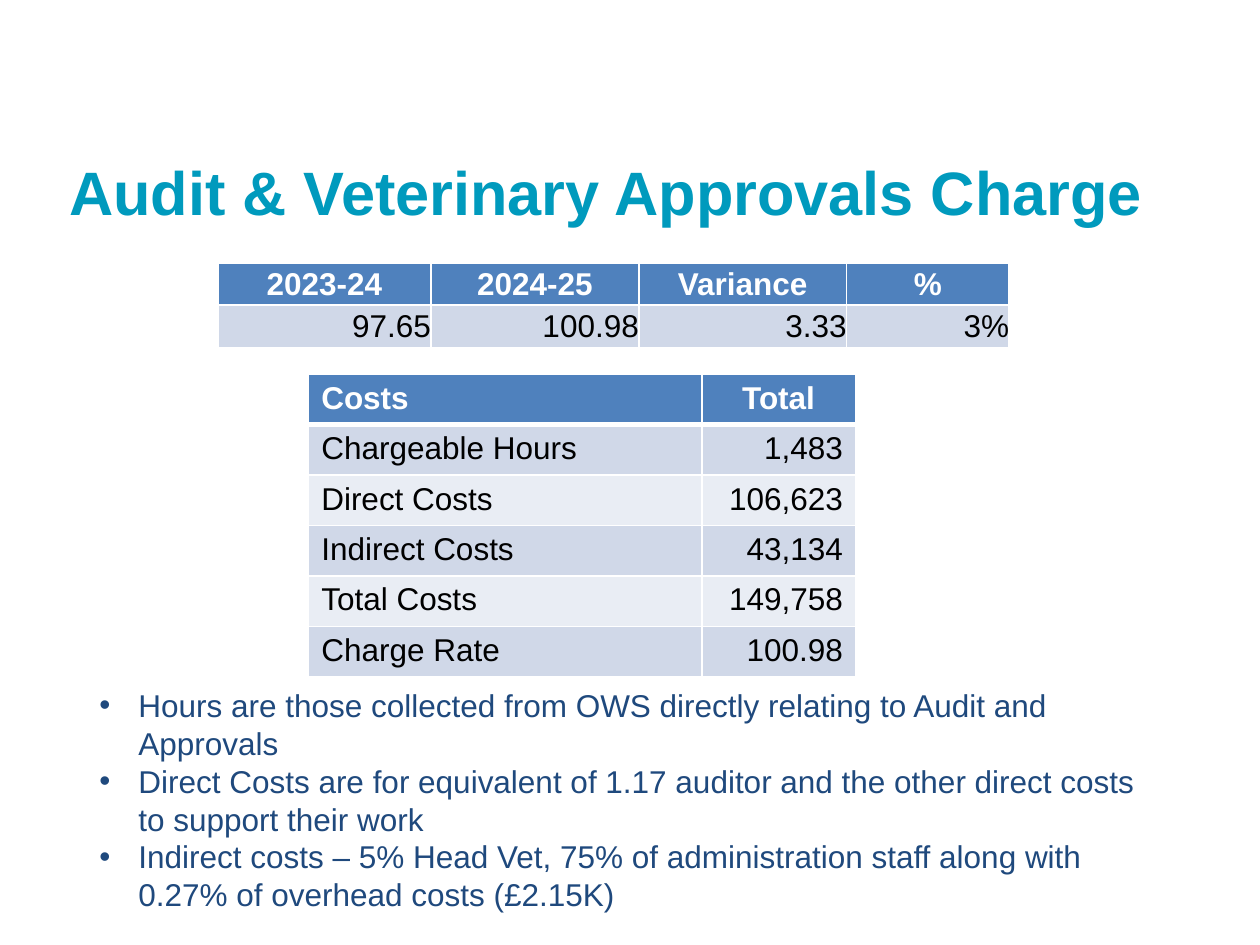
from lxml import etree
from pptx import Presentation
from pptx import util as u
from pptx.dml.color import RGBColor
from pptx.enum import shapes, text
from pptx.oxml import ns

PX = 9144  # 100 px to the inch
FONT = "Arial"
COLORS = {
    "title": "009ABD", "body": "1F497D", "white": "FFFFFF", "black": "000000",
    "header": "4F81BD", "band1": "D0D8E8", "band2": "E9EDF4",
}
LEFT, CENTER, RIGHT = text.PP_ALIGN.LEFT, text.PP_ALIGN.CENTER, text.PP_ALIGN.RIGHT
TOP, MIDDLE = text.MSO_ANCHOR.TOP, text.MSO_ANCHOR.MIDDLE


def px(n):
    return u.Emu(n * PX)


def rgb(name):
    return RGBColor.from_string(COLORS[name])


def write(p, words, size=18, color="black", bold=False, align=LEFT):
    p.alignment = align
    r = p.add_run()
    r.text = words
    r.font.name, r.font.size, r.font.bold = FONT, u.Pt(size), bold
    r.font.color.rgb = rgb(color)


def set_bullet(p, indent):
    pPr = p._p.get_or_add_pPr()
    pPr.set("marL", str(px(indent)))
    pPr.set("indent", str(-px(indent)))
    etree.SubElement(pPr, ns.qn("a:buFont"), typeface=FONT)
    etree.SubElement(pPr, ns.qn("a:buChar"), char="•")


def set_borders(cell, **widths):
    """Draw white borders; widths in points are keyed L, R, T and B."""
    tcPr = cell._tc.get_or_add_tcPr()
    for i, side in enumerate("LRTB"):
        ln = etree.Element(ns.qn(f"a:ln{side}"), w=str(u.Pt(widths.get(side, 1))))
        fill = etree.SubElement(ln, ns.qn("a:solidFill"))
        etree.SubElement(fill, ns.qn("a:srgbClr"), val=COLORS["white"])
        tcPr.insert(i, ln)


class Deck:
    def __init__(self, width, height):
        self.prs = Presentation()
        self.prs.slide_width, self.prs.slide_height = px(width), px(height)
        self.s = self.prs.slides.add_slide(self.prs.slide_layouts[6])

    def title(self, box, words):
        tf = self.s.shapes.add_textbox(*map(px, box)).text_frame
        tf.word_wrap, tf.vertical_anchor = True, MIDDLE
        write(tf.paragraphs[0], words, size=35, color="title", bold=True)

    def bullets(self, box, items):
        sp = self.s.shapes.add_shape(shapes.MSO_SHAPE.RECTANGLE, *map(px, box))
        sp.shadow.inherit = False
        sp.fill.solid()
        sp.fill.fore_color.rgb = rgb("white")
        sp.line.color.rgb, sp.line.width = rgb("white"), u.Pt(2)
        tf = sp.text_frame
        tf.word_wrap, tf.vertical_anchor = True, MIDDLE
        for i, item in enumerate(items):
            p = tf.add_paragraph() if i else tf.paragraphs[0]
            set_bullet(p, 31)
            write(p, item, color="body")

    def table(self, box, cols, heights, rows, head_align, body_align,
              rule, anchor=TOP, margin=None):
        frame = self.s.shapes.add_table(len(rows), len(cols), *map(px, box))
        table = frame.table
        for col, w in zip(table.columns, cols):
            col.width = px(w)
        for row, h in zip(table.rows, heights):
            row.height = px(h)
        frame.height = px(box[3])
        for i, values in enumerate(rows):
            head = i == 0
            fill = "header" if head else "band1" if i % 2 else "band2"
            aligns = head_align if head else body_align
            for j, (value, align) in enumerate(zip(values, aligns)):
                cell = table.cell(i, j)
                cell.vertical_anchor = anchor
                if margin is not None:
                    cell.margin_left = cell.margin_right = px(margin)
                    cell.margin_top = cell.margin_bottom = px(margin)
                cell.fill.solid()
                cell.fill.fore_color.rgb = rgb(fill)
                set_borders(cell, B=rule if head else 1, T=rule if i == 1 else 1)
                write(cell.text_frame.paragraphs[0], value, bold=head,
                      color="white" if head else "black", align=align)


def main():
    deck = Deck(1000, 750)

    # Heading
    deck.title((45, 115, 885, 74), "Audit & Veterinary Approvals Charge")

    # Notes on the costs
    deck.bullets((69, 524, 861, 221), [
        "Hours are those collected from OWS directly relating to Audit and Approvals",
        "Direct Costs are for equivalent of 1.17 auditor and the other direct costs "
        "to support their work",
        "Indirect costs – 5% Head Vet, 75% of administration staff along with "
        "0.27% of overhead costs (£2.15K)",
    ])

    # Cost breakdown
    deck.table((245, 297, 434, 240), [312, 122], [30] + [31] * 5, [
        ("Costs", "Total"),
        ("Chargeable Hours", "1,483"),
        ("Direct Costs", "106,623"),
        ("Indirect Costs", "43,134"),
        ("Total Costs", "149,758"),
        ("Charge Rate", "100.98"),
    ], head_align=(LEFT, CENTER), body_align=(LEFT, RIGHT), rule=3)

    # Change in the charge between years
    deck.table((173, 209, 629, 68), [169, 165, 165, 129], [33, 34], [
        ("2023-24", "2024-25", "Variance", "%"),
        ("97.65", "100.98", "3.33", "3%"),
    ], head_align=[CENTER] * 4, body_align=[RIGHT] * 4, rule=1.5,
        anchor=MIDDLE, margin=0)

    deck.prs.save("out.pptx")


if __name__ == "__main__":
    main()
